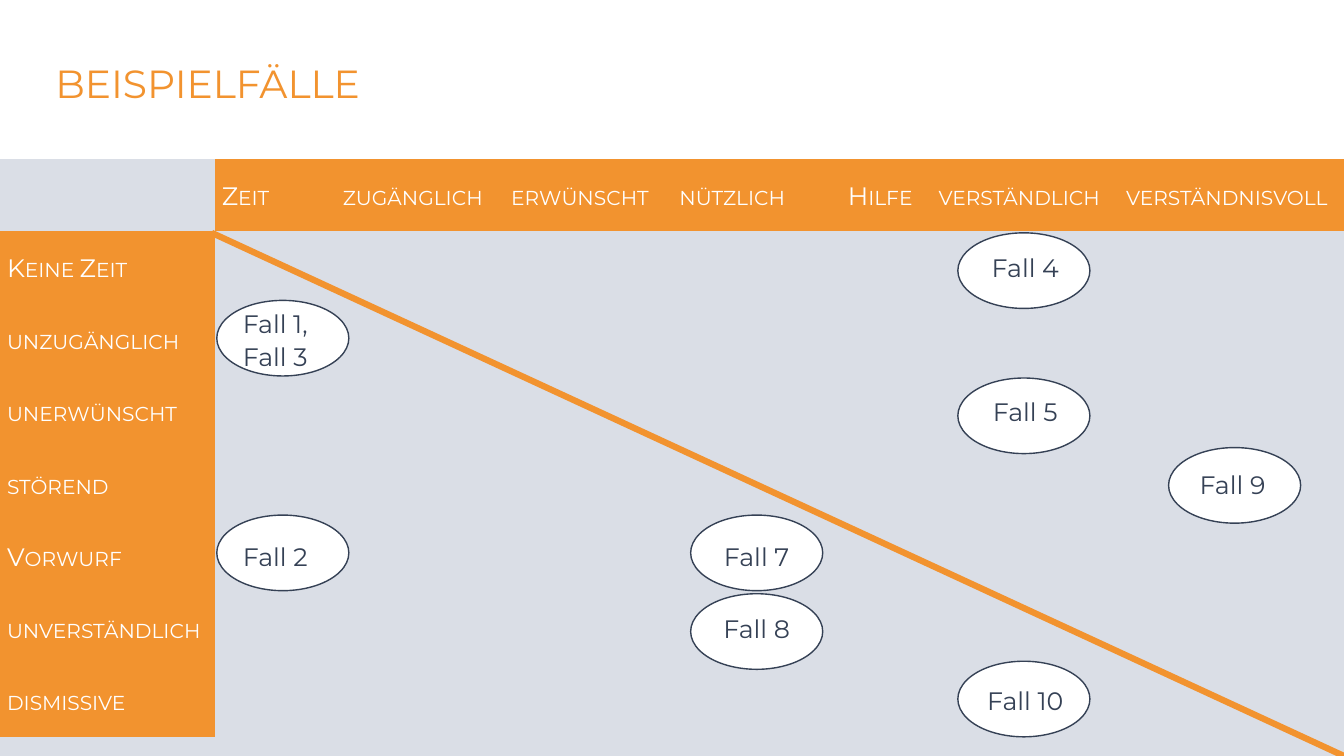
from dataclasses import dataclass
from lxml.etree import SubElement
from pptx import Presentation
from pptx.dml.color import RGBColor
from pptx.enum.shapes import MSO_CONNECTOR, MSO_SHAPE
from pptx.enum.text import MSO_ANCHOR, MSO_AUTO_SIZE, PP_ALIGN
from pptx.oxml.ns import qn
from pptx.util import Inches, Pt

TITLE = "BEISPIELFÄLLE"
COLUMN_HEADS = ["Zeit", "zugänglich", "erwünscht", "nützlich", "Hilfe",
                "verständlich", "verständnisvoll"]
ROW_HEADS = ["Keine Zeit", "unzugänglich", "unerwünscht", "störend",
             "Vorwurf", "unverständlich", "dismissive"]
CASES = [
    ("Fall 4", 1, 6, 9.5, 2.31),
    ("Fall 1, Fall 3", 2, 1, 2.15, 2.98),
    ("Fall 2", 5, 1, 2.15, 5.11),
    ("Fall 8", 6, 4, 6.85, 5.89),
    ("Fall 7", 5, 4, 6.85, 5.11),
    ("Fall 5", 3, 6, 9.5, 3.75),
    ("Fall 9", 4, 7, 11.59, 4.44),
    ("Fall 10", 7, 6, 9.5, 6.56),
]
COLUMN_WIDTHS = [2.13, 1.2, 1.67, 1.67, 1.67, 0.9, 1.86, 2.25]
SLIDE_WIDTH, SLIDE_HEIGHT = 13.33, 7.5
TABLE_TOP, TABLE_HEIGHT = 1.58, 5.73
OVAL_WIDTH, OVAL_HEIGHT = 1.31, 0.75
PLAIN_TABLE_STYLE = "{2D5ABB26-0587-4C30-8999-92F81FD0307C}"


@dataclass(frozen=True)
class Theme:
    font: str = "Montserrat"
    title_size: int = 28
    body_size: int = 18
    orange: RGBColor = RGBColor(0xF2, 0x93, 0x2F)
    grey: RGBColor = RGBColor(0xDA, 0xDE, 0xE6)
    navy: RGBColor = RGBColor(0x35, 0x41, 0x55)
    white: RGBColor = RGBColor(0xFF, 0xFF, 0xFF)


THEME = Theme()


def add_span(para, text, size, color):
    span = para.add_run()
    span.text = text
    span.font.name = THEME.font
    span.font.size = Pt(size)
    span.font.color.rgb = color
    return span


def add_outlined(page, kind, left, top, width, height, line_color):
    shape = page.shapes.add_shape(kind, Inches(left), Inches(top), Inches(width), Inches(height))
    shape.shadow.inherit = False
    shape.fill.solid()
    shape.fill.fore_color.rgb = THEME.white
    shape.line.color.rgb = line_color
    shape.line.width = Pt(1)


def write_cell(cell, text, color, align):
    para = cell.text_frame.paragraphs[0]
    para.alignment = align
    para.line_spacing = 1.07
    para.space_after = Pt(8)
    return add_span(para, text, THEME.body_size, color)


def write_head(cell, text):
    cell.fill.solid()
    cell.fill.fore_color.rgb = THEME.orange
    span = write_cell(cell, text, THEME.white, PP_ALIGN.LEFT)
    span.font._element.set("cap", "small")


def add_matrix(page):
    frame = page.shapes.add_table(len(ROW_HEADS) + 1, len(COLUMN_WIDTHS), 0, Inches(TABLE_TOP),
                                  Inches(SLIDE_WIDTH), Inches(TABLE_HEIGHT))
    table = frame.table
    table.first_row = table.horz_banding = False
    table._tbl.tblPr.find(qn("a:tableStyleId")).text = PLAIN_TABLE_STYLE
    for column, width in zip(table.columns, COLUMN_WIDTHS):
        column.width = Inches(width)
    for cell in table.iter_cells():
        cell.fill.background()
        cell.vertical_anchor = MSO_ANCHOR.MIDDLE
        cell.margin_left = cell.margin_right = Inches(0.07)
        cell.margin_top = cell.margin_bottom = 0
    corner = table.cell(0, 0)
    corner.fill.solid()
    corner.fill.fore_color.rgb = THEME.grey
    for index, text in enumerate(COLUMN_HEADS, 1):
        write_head(table.cell(0, index), text)
    for index, text in enumerate(ROW_HEADS, 1):
        write_head(table.cell(index, 0), text)
    for text, row, column, _, _ in CASES:
        write_cell(table.cell(row, column), text, THEME.navy, PP_ALIGN.CENTER)


def add_diagonal(page):
    diagonal = page.shapes.add_connector(MSO_CONNECTOR.STRAIGHT, Inches(2.1), Inches(2.31),
                                         Inches(SLIDE_WIDTH), Inches(SLIDE_HEIGHT))
    diagonal.line.color.rgb = THEME.orange
    diagonal.line.width = Pt(4.5)
    SubElement(diagonal._element.spPr, qn("a:effectLst"))


def place_title(page):
    title = page.shapes.title
    title.left, title.top = Inches(0.45), Inches(0.6)
    title.width, title.height = Inches(12.61), Inches(0.51)
    box = title.text_frame
    box.auto_size = MSO_AUTO_SIZE.NONE
    box.vertical_anchor = MSO_ANCHOR.MIDDLE
    para = box.paragraphs[0]
    para.alignment = PP_ALIGN.LEFT
    para.line_spacing = 0.9
    add_span(para, TITLE, THEME.title_size, THEME.orange)
    page.shapes._spTree.append(title._element)


def main():
    deck = Presentation()
    deck.slide_width, deck.slide_height = Inches(SLIDE_WIDTH), Inches(SLIDE_HEIGHT)
    page = deck.slides.add_slide(deck.slide_layouts[5])
    page.background.fill.solid()
    page.background.fill.fore_color.rgb = THEME.grey
    add_outlined(page, MSO_SHAPE.RECTANGLE, 0, 0, SLIDE_WIDTH, TABLE_TOP, THEME.white)
    for _, _, _, left, top in CASES:
        add_outlined(page, MSO_SHAPE.OVAL, left, top, OVAL_WIDTH, OVAL_HEIGHT, THEME.navy)
    add_matrix(page)
    add_diagonal(page)
    place_title(page)
    deck.save("out.pptx")


if __name__ == "__main__":
    main()
